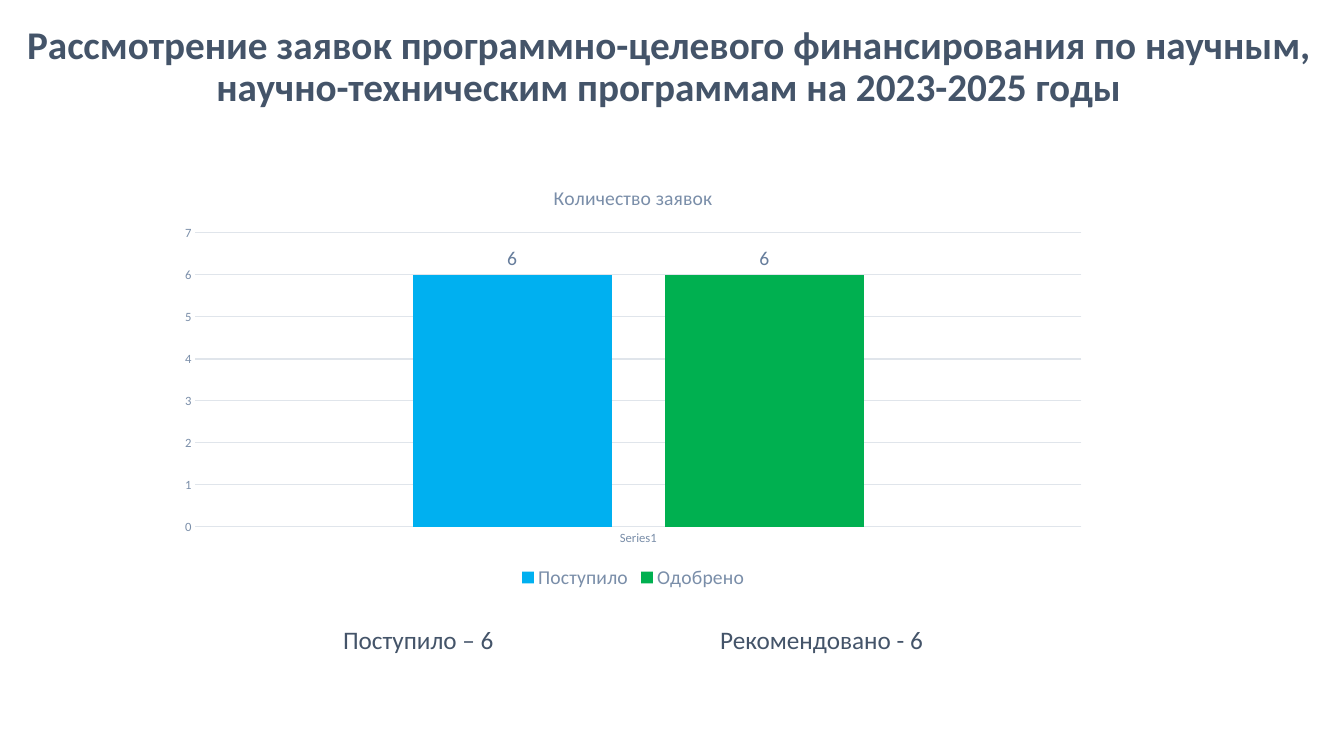
from pptx import Presentation
from pptx.chart.data import CategoryChartData
from pptx.dml.color import RGBColor
from pptx.enum.chart import XL_CHART_TYPE, XL_LABEL_POSITION, XL_LEGEND_POSITION, XL_TICK_MARK
from pptx.enum.shapes import MSO_SHAPE
from pptx.enum.text import MSO_ANCHOR, PP_ALIGN
from pptx.oxml.ns import qn
from pptx.util import Inches, Pt
from lxml import etree

COLUMNS = XL_CHART_TYPE.COLUMN_CLUSTERED
OUTSIDE = XL_LABEL_POSITION.OUTSIDE_END
BOTTOM = XL_LEGEND_POSITION.BOTTOM
NO_TICK = XL_TICK_MARK.NONE

NAVY = RGBColor(0x44, 0x54, 0x69)
SLATE = RGBColor(0x66, 0x7D, 0x9C)
MUTED = RGBColor(0x7A, 0x8E, 0xA9)
GRID = RGBColor(0xE0, 0xE5, 0xEB)
WHITE = RGBColor(0xFF, 0xFF, 0xFF)
BLUE = RGBColor(0x00, 0xB0, 0xF0)
GREEN = RGBColor(0x00, 0xB0, 0x50)

TITLE = ("Рассмотрение заявок программно-целевого финансирования по научным, "
         "научно-техническим программам на 2023-2025 годы")
CHART_TITLE = "Количество заявок"
CATEGORY = "Series1"
SERIES = [("Поступило", 6, BLUE), ("Одобрено", 6, GREEN)]
SUMMARY = ["Поступило – 6", "Рекомендовано - 6"]

WIDTH, HEIGHT = 13.33, 7.5
BODY_LEFT, BODY_WIDTH = 1.65, 9.26
SUMMARY_CENTRES = [2.4, 6.4]  # inches from the inner left edge of the box


def style_font(font, size, color, bold=False):
    values = {"name": "Calibri", "size": Pt(size), "bold": bold}
    for key, value in values.items():
        setattr(font, key, value)
    font.color.rgb = color


def style_line(line, color, width):
    line.color.rgb = color
    line.width = Pt(width)


def add_title(page):
    box = page.shapes.add_textbox(Inches(0.11), Inches(0.2), Inches(13.04), Inches(0.75))
    box.text_frame.word_wrap = True
    para = box.text_frame.paragraphs[0]
    para.alignment = PP_ALIGN.CENTER
    para.line_spacing = 0.9
    span = para.add_run()
    span.text = TITLE
    style_font(span.font, 28, NAVY, bold=True)


def add_summary(page):
    """Place the totals in one box, each centred on its own tab stop."""
    box = page.shapes.add_shape(MSO_SHAPE.RECTANGLE, Inches(BODY_LEFT), Inches(6.14),
                                Inches(BODY_WIDTH), Inches(0.41))
    box.shadow.inherit = False
    box.fill.background()
    style_line(box.line, WHITE, 1)
    box.text_frame.vertical_anchor = MSO_ANCHOR.MIDDLE
    para = box.text_frame.paragraphs[0]
    para.alignment = PP_ALIGN.LEFT
    tabs = etree.SubElement(para._p.get_or_add_pPr(), qn("a:tabLst"))
    for centre in SUMMARY_CENTRES:
        etree.SubElement(tabs, qn("a:tab"), pos=str(Inches(centre)), algn="ctr")
    for total in SUMMARY:
        span = para.add_run()
        span.text = "\t" + total
        style_font(span.font, 18, NAVY)


def add_bar_chart(page):
    data = CategoryChartData()
    data.categories = [CATEGORY]
    for name, count, _ in SERIES:
        data.add_series(name, [count])
    chart = page.shapes.add_chart(COLUMNS, Inches(BODY_LEFT), Inches(1.66),
                                  Inches(BODY_WIDTH), Inches(4.23), data).chart
    style_font(chart.font, 10, NAVY)

    chart.has_title = True
    chart.chart_title.include_in_layout = False
    span = chart.chart_title.text_frame.paragraphs[0].add_run()
    span.text = CHART_TITLE
    style_font(span.font, 14, MUTED)

    chart.has_legend = True
    chart.legend.position = BOTTOM
    chart.legend.include_in_layout = False
    style_font(chart.legend.font, 14, MUTED)

    for axis in (chart.category_axis, chart.value_axis):
        axis.major_tick_mark = axis.minor_tick_mark = NO_TICK
        style_font(axis.tick_labels.font, 9, MUTED)
    style_line(chart.category_axis.format.line, GRID, 0.75)
    values = chart.value_axis
    values.minimum_scale, values.maximum_scale, values.major_unit = 0, 7, 1
    values.format.line.fill.background()
    style_line(values.major_gridlines.format.line, GRID, 0.75)

    plot = chart.plots[0]
    plot.gap_width, plot.overlap, plot.vary_by_categories = 219, -27, False
    for series, (_, _, color) in zip(plot.series, SERIES):
        series.format.fill.solid()
        series.format.fill.fore_color.rgb = color
        labels = series.data_labels
        labels.show_value = True
        labels.position = OUTSIDE
        style_font(labels.font, 14, SLATE)


def main():
    deck = Presentation()
    deck.slide_width, deck.slide_height = Inches(WIDTH), Inches(HEIGHT)
    page = deck.slides.add_slide(deck.slide_layouts[6])
    add_title(page)
    add_summary(page)
    add_bar_chart(page)
    deck.save("out.pptx")


if __name__ == "__main__":
    main()
